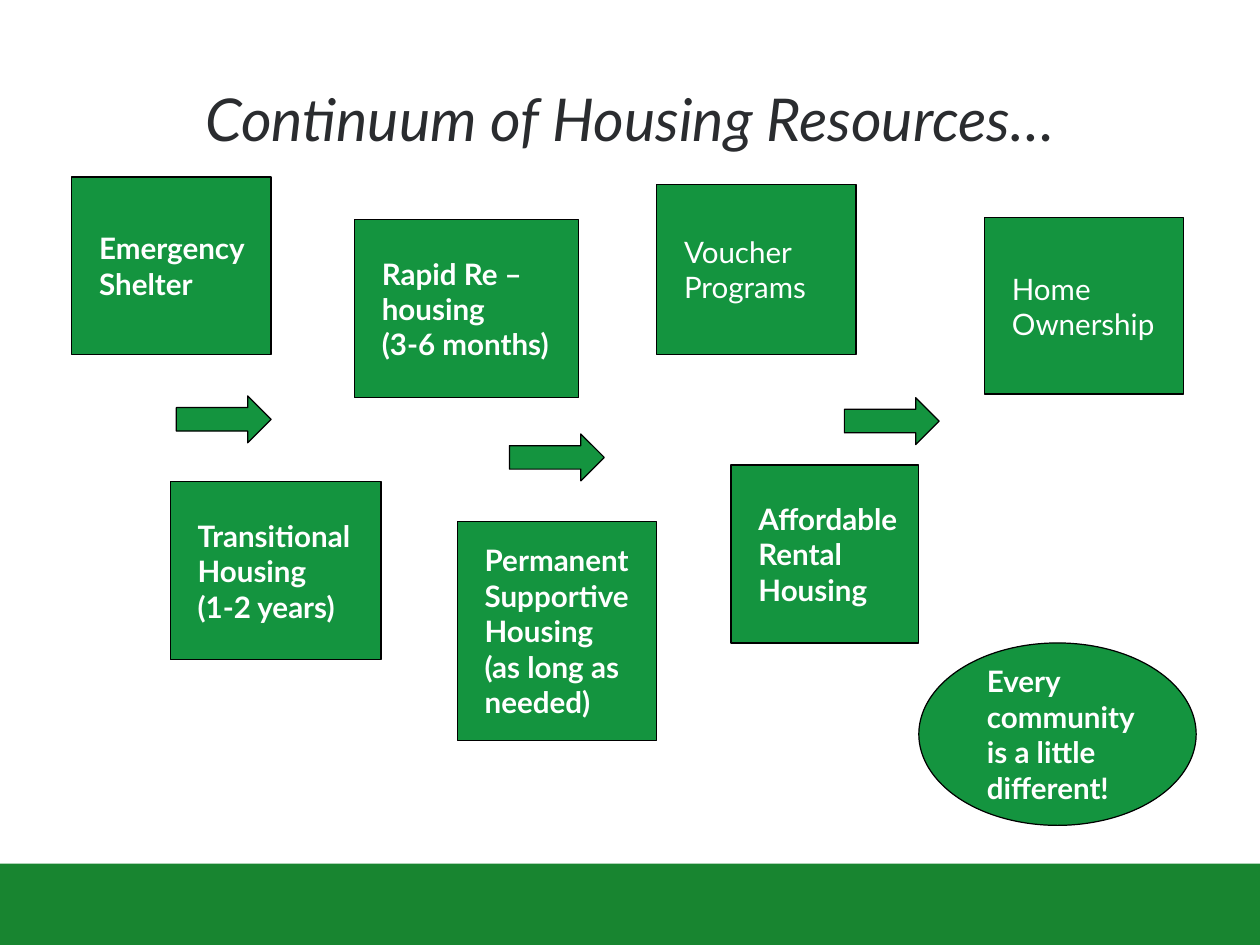
from dataclasses import dataclass

from pptx import Presentation
from pptx.dml.color import RGBColor
from pptx.enum.shapes import MSO_SHAPE
from pptx.enum.text import MSO_ANCHOR, PP_ALIGN
from pptx.util import Inches, Pt


@dataclass(frozen=True)
class Theme:
    font: str = "Lato"
    green: RGBColor = RGBColor(0x14, 0x94, 0x3F)
    footer: RGBColor = RGBColor(0x18, 0x85, 0x30)
    outline: RGBColor = RGBColor(0, 0, 0)
    dark: RGBColor = RGBColor(0x2A, 0x2C, 0x2F)
    white: RGBColor = RGBColor(0xFF, 0xFF, 0xFF)
    title_size: int = 48
    body_size: int = 24


THEME = Theme()
SLIDE_WIDTH, SLIDE_HEIGHT = 14.22, 10.67

STAGES = [
    ((0.81, 2, 2.25, 2), ["Emergency Shelter"], True),
    ((1.92, 5.44, 2.38, 2.01), ["Transitional Housing", "(1-2 years)"], True),
    ((4, 2.48, 2.53, 2.01), ["Rapid Re –housing", "(3-6 months)"], True),
    ((5.16, 5.89, 2.25, 2.47), ["Permanent Supportive Housing", "(as long as needed)"], True),
    ((7.41, 2.08, 2.25, 1.92), ["Voucher Programs"], False),
    ((8.25, 5.25, 2.12, 2.01), ["Affordable Rental Housing"], True),
    ((11.11, 2.46, 2.25, 1.99), ["Home Ownership"], False),
]
ARROW_POSITIONS = [(1.99, 4.47), (5.75, 4.9), (9.53, 4.49)]
ARROW_SIZE = (1.07, 0.53)


def add_filled_shape(slide, kind, box, color, outlined=True):
    shape = slide.shapes.add_shape(kind, *map(Inches, box))
    shape.shadow.inherit = False
    shape.fill.solid()
    shape.fill.fore_color.rgb = color
    if outlined:
        shape.line.color.rgb = THEME.outline
        shape.line.width = Pt(1)
    else:
        shape.line.fill.background()
    return shape


def style_font(font, size, color):
    font.name = THEME.font
    font.size = Pt(size)
    font.color.rgb = color


def add_title(slide, box, text):
    frame = slide.shapes.add_textbox(*map(Inches, box)).text_frame
    frame.word_wrap = True
    frame.vertical_anchor = MSO_ANCHOR.MIDDLE
    paragraph = frame.paragraphs[0]
    paragraph.text = text
    paragraph.alignment = PP_ALIGN.CENTER
    style_font(paragraph.font, THEME.title_size, THEME.dark)
    paragraph.font.italic = True


def add_label(slide, kind, box, lines, bold):
    frame = add_filled_shape(slide, kind, box, THEME.green).text_frame
    frame.word_wrap = True
    frame.vertical_anchor = MSO_ANCHOR.MIDDLE
    frame.margin_left = Inches(0.31)
    frame.margin_top = frame.margin_right = frame.margin_bottom = Inches(0.06)
    frame.text = "\n".join(lines)
    for paragraph in frame.paragraphs:
        paragraph.alignment = PP_ALIGN.LEFT
        style_font(paragraph.font, THEME.body_size, THEME.white)
        paragraph.font.bold = bold


def add_continuum(slide):
    for box, lines, bold in STAGES:
        add_label(slide, MSO_SHAPE.RECTANGLE, box, lines, bold)
    for position in ARROW_POSITIONS:
        add_filled_shape(slide, MSO_SHAPE.RIGHT_ARROW, position + ARROW_SIZE, THEME.green)


def main():
    presentation = Presentation()
    presentation.slide_width = Inches(SLIDE_WIDTH)
    presentation.slide_height = Inches(SLIDE_HEIGHT)
    slide = presentation.slides.add_slide(presentation.slide_layouts[6])
    footer_box = (0, 9.75, SLIDE_WIDTH, SLIDE_HEIGHT - 9.75)
    add_filled_shape(slide, MSO_SHAPE.RECTANGLE, footer_box, THEME.footer, outlined=False)
    add_title(slide, (1.11, 0.83, 12, 1), "Continuum of Housing Resources…")
    add_continuum(slide)
    add_label(slide, MSO_SHAPE.OVAL, (10.37, 7.26, 3.13, 2.06),
              ["Every community is a little different!"], True)
    presentation.save("out.pptx")


if __name__ == "__main__":
    main()
